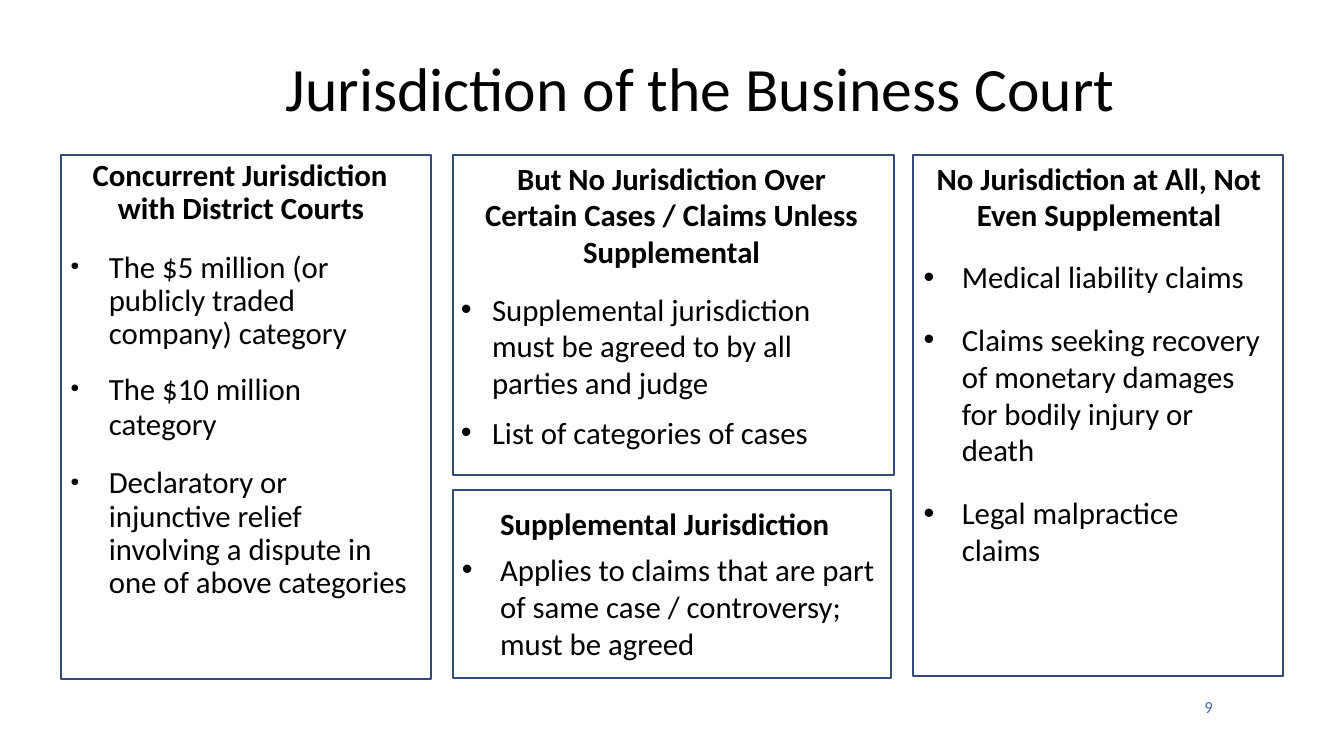
"""Build the slide on the jurisdiction of the Business Court."""
from dataclasses import dataclass

from lxml import etree
from pptx import Presentation
from pptx.dml.color import RGBColor
from pptx.enum.shapes import MSO_SHAPE
from pptx.enum.text import MSO_ANCHOR, MSO_AUTO_SIZE, PP_ALIGN
from pptx.oxml.ns import qn
from pptx.slide import Slide
from pptx.text.text import TextFrame
from pptx.util import Inches, Pt

RECTANGLE = MSO_SHAPE.RECTANGLE
TOP, MIDDLE = MSO_ANCHOR.TOP, MSO_ANCHOR.MIDDLE
LEFT, CENTER, RIGHT = PP_ALIGN.LEFT, PP_ALIGN.CENTER, PP_ALIGN.RIGHT
NO_AUTOFIT = MSO_AUTO_SIZE.NONE

COLORS = {"text": "000000", "border": "34487C", "page": "4966AC"}
FONT = "Calibri"
TITLE_ONLY = 5


@dataclass(frozen=True)
class Item:
    """One paragraph: indents in inches, spacing in points."""
    text: str
    indent: float = 0
    first: float = 0
    right: float = 0
    before: float = 0
    line: float = 1.0
    exact: bool = False
    bold: bool = False
    align: PP_ALIGN = LEFT
    bullet_percent: int = 0
    size: float = 22
    color: str = "text"


@dataclass(frozen=True)
class Block:
    """A bordered panel or a plain text area, in inches."""
    left: float
    top: float
    width: float
    height: float
    items: tuple[Item, ...] = ()
    inset: float = 0.01
    bordered: bool = False
    anchor: MSO_ANCHOR = TOP


def heading(text: str, **options) -> Item:
    """Describe a bold panel heading."""
    return Item(text, bold=True, **options)


def bullet(text: str, indent: float = 0.47, hang: float = 0.38, percent: int = 100, **options) -> Item:
    """Describe a bulleted paragraph with a hanging indent."""
    return Item(text, indent=indent, first=-hang, bullet_percent=percent, **options)


TITLE = Item("Jurisdiction of the Business Court", size=44, align=CENTER)

BLOCKS = (
    Block(0.61, 1.54, 3.67, 5.2, (
        heading("Concurrent Jurisdiction with District Courts",
                indent=0.56, first=-0.25, line=23.8, exact=True),
        bullet("The $5 million (or publicly traded company) category",
               percent=80, right=0.5, before=17.9, line=23.8, exact=True),
        bullet("The $10 million category",
               percent=80, right=0.5, before=14.9, line=25.1, exact=True),
        bullet("Declaratory or injunctive relief involving a dispute in one of above categories",
               percent=80, right=0.22, before=18, line=0.9),
    ), inset=0.04, bordered=True),
    Block(9.06, 1.54, 3.67, 5.17, bordered=True),
    Block(4.49, 1.54, 4.38, 3.17, (
        heading("But No Jurisdiction Over Certain Cases / Claims Unless Supplemental",
                indent=0.27, right=0.31, align=CENTER),
        bullet("Supplemental jurisdiction must be agreed to by all parties and judge",
               indent=0.39, hang=0.31, right=0.6, before=14.4),
        bullet("List of categories of cases", indent=0.39, hang=0.31, before=9.1),
    ), inset=0.04, bordered=True),
    Block(11.76, 6.93, 0.27, 0.19, (
        Item("9", size=12, color="page", align=RIGHT, line=12.3, exact=True),
    ), inset=0, anchor=MIDDLE),
    Block(4.49, 4.86, 4.35, 1.87, (
        heading("Supplemental Jurisdiction", indent=0.47),
        bullet("Applies to claims that are part of same case / controversy; must be agreed",
               right=0.1, before=6),
    ), inset=0.15, bordered=True),
    Block(9.21, 1.57, 3.38, 0.76, (
        heading("No Jurisdiction at All, Not Even Supplemental", align=CENTER),
    )),
    Block(9.16, 2.55, 3.42, 2.11, (
        bullet("Medical liability claims", indent=0.38),
        bullet("Claims seeking recovery of monetary damages for bodily injury or death",
               indent=0.38, right=0.06, before=18.1),
    )),
    Block(9.16, 4.89, 2.63, 0.76, (
        bullet("Legal malpractice claims", indent=0.38),
    )),
)


def write(frame: TextFrame, items: tuple[Item, ...], *, inset: float = 0.01,
          anchor: MSO_ANCHOR = TOP) -> None:
    """Fill a text frame with formatted paragraphs."""
    frame.word_wrap = True
    frame.auto_size = NO_AUTOFIT
    frame.vertical_anchor = anchor
    frame.margin_left = frame.margin_right = frame.margin_bottom = 0
    frame.margin_top = Inches(inset)
    for index, item in enumerate(items):
        paragraph = frame.add_paragraph() if index else frame.paragraphs[0]
        paragraph.alignment = item.align
        paragraph.space_before = Pt(item.before)
        paragraph.line_spacing = Pt(item.line) if item.exact else item.line
        run = paragraph.add_run()
        run.text = item.text
        run.font.name = FONT
        run.font.size = Pt(item.size)
        run.font.bold = item.bold
        run.font.color.rgb = RGBColor.from_string(COLORS[item.color])
        properties = paragraph._p.get_or_add_pPr()
        for name, length in (("marL", item.indent), ("indent", item.first), ("marR", item.right)):
            properties.set(name, str(Inches(length)))
        if item.bullet_percent:
            etree.SubElement(properties, qn("a:buSzPct")).set("val", str(item.bullet_percent * 1000))
            etree.SubElement(properties, qn("a:buFont")).set("typeface", "Arial")
            etree.SubElement(properties, qn("a:buChar")).set("char", "•")


def draw_block(slide: Slide, block: Block) -> None:
    """Draw one panel or text area with its paragraphs."""
    place = [Inches(n) for n in (block.left, block.top, block.width, block.height)]
    if block.bordered:
        area = slide.shapes.add_shape(RECTANGLE, *place)
        area.shadow.inherit = False
        area.fill.background()
        area.line.color.rgb = RGBColor.from_string(COLORS["border"])
        area.line.width = Pt(1.5)
    else:
        area = slide.shapes.add_textbox(*place)
    if block.items:
        write(area.text_frame, block.items, inset=block.inset, anchor=block.anchor)


def main() -> None:
    """Create the presentation and save it."""
    presentation = Presentation()
    presentation.slide_width, presentation.slide_height = Inches(13.33), Inches(7.5)
    slide = presentation.slides.add_slide(presentation.slide_layouts[TITLE_ONLY])
    title = slide.shapes.title
    title.left, title.top = Inches(1.17), Inches(0.51)
    title.width, title.height = Inches(11.56), Inches(0.69)
    write(title.text_frame, (TITLE,), anchor=MIDDLE)
    for block in BLOCKS:
        draw_block(slide, block)
    presentation.save("out.pptx")


if __name__ == "__main__":
    main()
